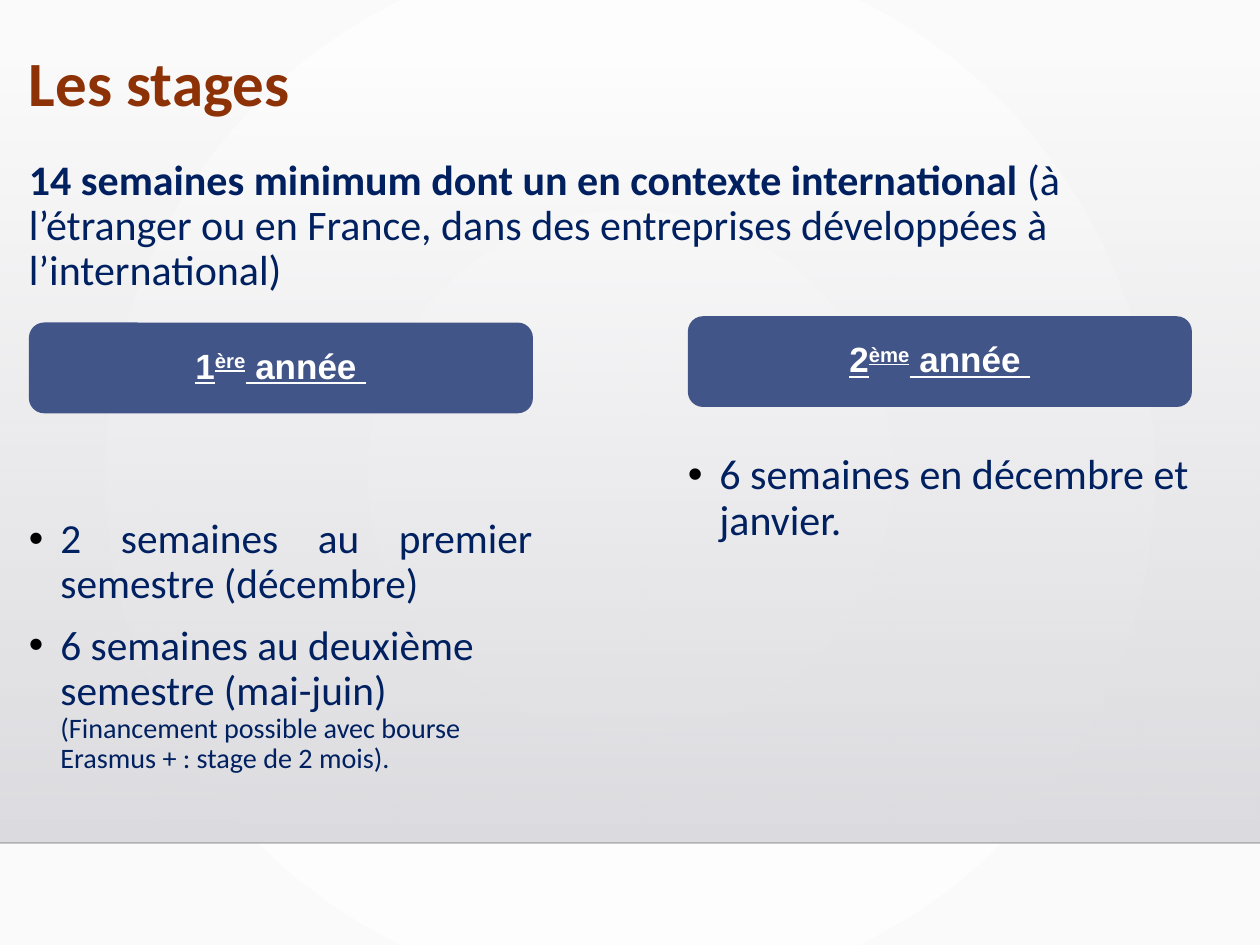
from dataclasses import dataclass

from lxml.etree import SubElement
from pptx import Presentation
from pptx.dml.color import RGBColor
from pptx.enum.shapes import MSO_CONNECTOR, MSO_SHAPE
from pptx.enum.text import MSO_ANCHOR, PP_ALIGN
from pptx.oxml.ns import qn
from pptx.util import Inches, Pt


@dataclass(frozen=True)
class Theme:
    heading: str = "8D3107"
    ink: str = "002060"
    badge: str = "415588"
    badge_text: str = "FFFFFF"
    bullet: str = "000000"
    rule: str = "000001"
    backdrop: tuple = ("FFFFFF", "FAFAFA")
    band: tuple = ("DCDCE0", "DEDEE2")
    body_font: str = "Calibri"
    badge_font: str = "Arial"
    heading_size: float = 36
    text_size: float = 24
    first_year_size: float = 23.6
    note_size: float = 16.1
    badge_size: float = 20


THEME = Theme()
LEFT, RIGHT, COLUMN = 0.23, 5.46, 4
BULLETS_TOP = 4.11


def rgb(code):
    return RGBColor.from_string(code)


def set_gradient(fill, colors):
    fill.gradient()
    for stop, color in zip(fill.gradient_stops, colors):
        stop.color.rgb = rgb(color)


def set_alpha(root, percent):
    """Set the opacity of the first colour under root."""
    color = next(root.iter(qn("a:srgbClr")))
    SubElement(color, qn("a:alpha"), val=str(percent * 1000))


def paint_background(page):
    """Circular gradient, spreading from the centre of the page."""
    set_gradient(page.background.fill, THEME.backdrop)
    gradient = next(page.element.iter(qn("a:gradFill")))
    gradient.remove(gradient.find(qn("a:lin")))
    circle = SubElement(gradient, qn("a:path"), path="circle")
    SubElement(circle, qn("a:fillToRect"), l="50000", t="50000", r="50000", b="50000")


def add_band(page):
    band = page.shapes.add_shape(MSO_SHAPE.RECTANGLE, 0, Inches(0.51), Inches(10), Inches(6.18))
    band.shadow.inherit = False
    set_gradient(band.fill, THEME.band)
    band.fill.gradient_angle = 270
    set_alpha(band.element.spPr, 0)
    band.line.fill.background()


def add_rule(page, top):
    rule = page.shapes.add_connector(
        MSO_CONNECTOR.STRAIGHT, 0, Inches(top), Inches(10), Inches(top))
    rule.line.color.rgb = rgb(THEME.rule)
    rule.line.width = Pt(1)
    properties = rule.element.spPr
    set_alpha(properties, 20)
    SubElement(properties, qn("a:effectLst"))


def set_frame(shape, anchor):
    frame = shape.text_frame
    frame.word_wrap = True
    frame.vertical_anchor = anchor
    frame.margin_left = frame.margin_right = frame.margin_top = frame.margin_bottom = 0
    return frame


def add_span(para, text, size, color=THEME.ink, font=THEME.body_font, bold=False):
    span = para.add_run()
    span.text = text
    span.font.name = font
    span.font.size = Pt(size)
    span.font.bold = bold
    span.font.color.rgb = rgb(color)
    return span


def add_title(page, heading, strong, rest):
    box = page.shapes.add_textbox(Inches(LEFT), Inches(1.79), Inches(9.1), Inches(0.55))
    frame = set_frame(box, MSO_ANCHOR.BOTTOM)
    para = frame.paragraphs[0]
    para.line_spacing = 0.9
    add_span(para, heading, THEME.heading_size, THEME.heading, bold=True)
    para = frame.add_paragraph()
    para.line_spacing = 0.9
    para.space_before = Pt(22)
    add_span(para, strong, THEME.text_size, bold=True)
    add_span(para, rest, THEME.text_size)


def add_bullet(para):
    properties = para._p.get_or_add_pPr()
    properties.set("marL", str(Inches(0.25)))
    properties.set("indent", str(Inches(-0.25)))
    color = SubElement(properties, qn("a:buClr"))
    SubElement(color, qn("a:srgbClr"), val=THEME.bullet)
    SubElement(properties, qn("a:buFont"), typeface="Arial")
    SubElement(properties, qn("a:buChar"), char="•")


def add_bullets(page, left, top, height, items, size):
    """Add a column of bullets and return its paragraphs."""
    box = page.shapes.add_textbox(Inches(left), Inches(top), Inches(COLUMN), Inches(height))
    frame = set_frame(box, MSO_ANCHOR.TOP)
    frame.margin_top = Inches(BULLETS_TOP - top)
    for index, item in enumerate(items):
        para = frame.add_paragraph() if index else frame.paragraphs[0]
        add_bullet(para)
        para.line_spacing = 0.9
        if index:
            para.space_before = Pt(10)
        add_span(para, item, size)
    return frame.paragraphs


def add_badge(page, left, top, number, suffix):
    badge = page.shapes.add_shape(
        MSO_SHAPE.ROUNDED_RECTANGLE, Inches(left), Inches(top), Inches(COLUMN), Inches(0.72))
    badge.shadow.inherit = False
    badge.fill.solid()
    badge.fill.fore_color.rgb = rgb(THEME.badge)
    badge.line.fill.background()
    para = set_frame(badge, MSO_ANCHOR.MIDDLE).paragraphs[0]
    para.alignment = PP_ALIGN.CENTER
    para.line_spacing = 0.9
    for text in (number, suffix, " année "):
        span = add_span(para, text, THEME.badge_size, THEME.badge_text, THEME.badge_font, True)
        span.font.underline = True
        if text == suffix:
            span.font._element.set("baseline", "30000")


def main():
    deck = Presentation()
    deck.slide_width, deck.slide_height = Inches(10), Inches(7.5)
    page = deck.slides.add_slide(deck.slide_layouts[6])

    paint_background(page)
    add_band(page)
    add_rule(page, 6.69)
    add_title(
        page, "Les stages",
        "14 semaines minimum dont un en contexte international ",
        "(à l’étranger ou en France, dans des entreprises développées à l’international)")

    first_year = add_bullets(
        page, LEFT, 2.92, 4.25,
        ["2 semaines au premier semestre (décembre)",
         "6 semaines au deuxième semestre (mai-juin)"],
        THEME.first_year_size)
    first_year[0].alignment = PP_ALIGN.JUSTIFY
    first_year[1].add_line_break()
    add_span(first_year[1], "(Financement possible avec bourse Erasmus + : stage de 2 mois).",
             THEME.note_size)
    add_bullets(page, RIGHT, 2.37, 3.17, ["6 semaines en décembre et janvier."], THEME.text_size)

    add_badge(page, LEFT, 2.56, "1", "ère")
    add_badge(page, RIGHT, 2.51, "2", "ème")
    deck.save("out.pptx")


if __name__ == "__main__":
    main()
